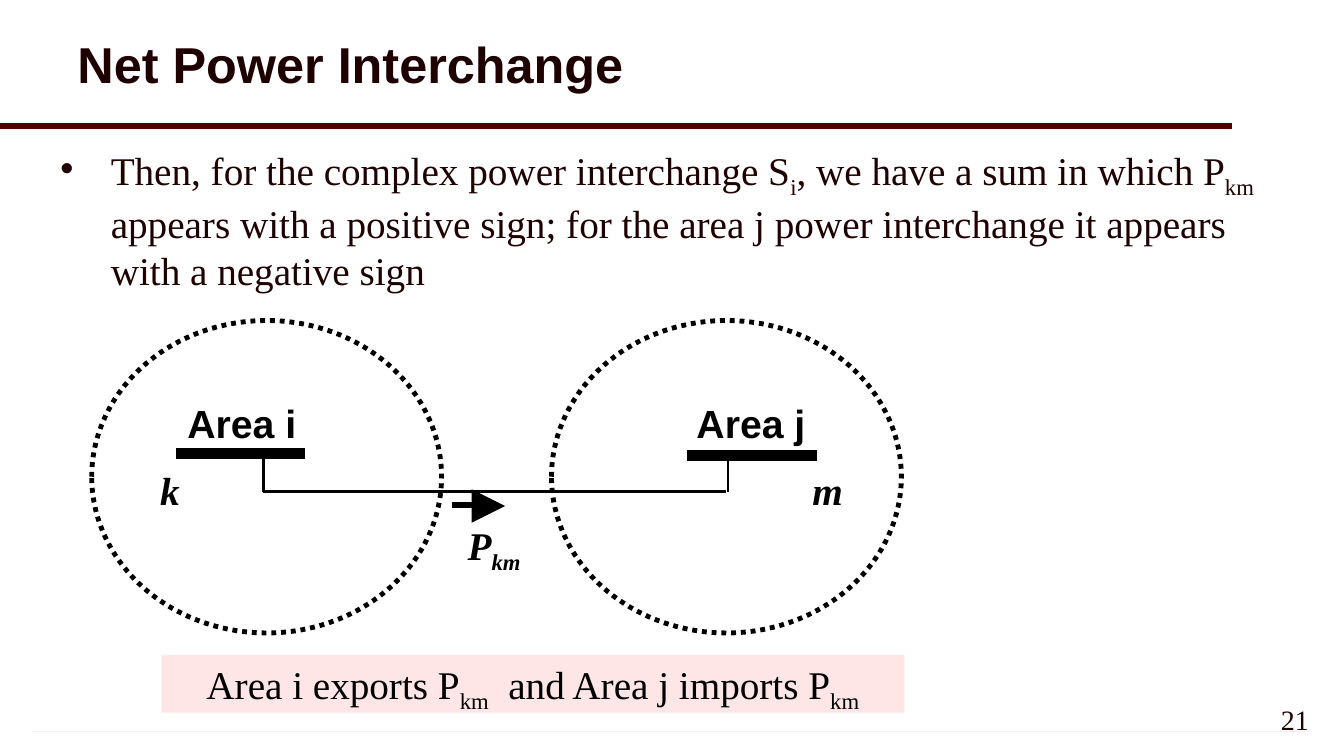
from lxml import etree
from pptx import Presentation
from pptx.dml.color import RGBColor
from pptx.enum.dml import MSO_LINE_DASH_STYLE as DASH
from pptx.enum.shapes import MSO_CONNECTOR, MSO_SHAPE
from pptx.enum.text import MSO_ANCHOR, PP_ALIGN
from pptx.oxml.ns import qn
from pptx.util import Inches, Pt

MAROON = RGBColor(0x50, 0x00, 0x00)
DARK = RGBColor(0x1E, 0x00, 0x00)
BLACK = RGBColor(0x00, 0x00, 0x00)
PINK = RGBColor(0xFF, 0xE6, 0xE6)
LILAC = RGBColor(0xCC, 0x99, 0xFF)
PALE_LILAC = RGBColor(0xF3, 0xEB, 0xFF)
SANS, SERIF = "Arial", "Times New Roman"

prs = Presentation()
prs.slide_width, prs.slide_height = Inches(13.33), Inches(7.5)
slide = prs.slides.add_slide(prs.slide_layouts[6])
shapes = slide.shapes


def write(box, parts, **font_format):
    """Fill the first paragraph; every second part is a subscript."""
    box.text_frame.word_wrap = True
    paragraph = box.text_frame.paragraphs[0]
    for index, part in enumerate(parts):
        run = paragraph.add_run()
        run.text = part
        values = {"size": Pt(28), "name": SERIF, **font_format}
        run.font.color.rgb = values.pop("color", BLACK)
        for attribute, value in values.items():
            setattr(run.font, attribute, value)
        if index % 2:
            run.font._element.set("baseline", "-25000")
    return paragraph


def add_line(x1, y1, x2, y2, width, color=BLACK, arrow=False):
    line = shapes.add_connector(MSO_CONNECTOR.STRAIGHT, Inches(x1), Inches(y1),
                                Inches(x2), Inches(y2))
    line.line.color.rgb = color
    line.line.width = Pt(width)
    if arrow:
        etree.SubElement(line.line._get_or_add_ln(), qn("a:tailEnd"), type="triangle")
    etree.SubElement(line._element.spPr, qn("a:effectLst"))


# Header and footer rules
footer_rule = shapes.add_shape(MSO_SHAPE.RECTANGLE, Inches(0.33), Inches(7.25),
                               Inches(12.66), Inches(0.01))
footer_rule.shadow.inherit = False
footer_rule.line.fill.background()
footer_rule.fill.gradient()
for stop, color in zip(footer_rule.fill.gradient_stops, (LILAC, PALE_LILAC)):
    stop.color.rgb = color
add_line(0, 1.25, 12.22, 1.25, 4, MAROON)

# Title and statement
title = shapes.add_textbox(Inches(0.67), Inches(0.08), Inches(12.22), Inches(1.17))
title.text_frame.vertical_anchor = MSO_ANCHOR.MIDDLE
write(title, ["Net Power Interchange"], size=Pt(36), name=SANS, color=DARK,
      bold=True).line_spacing = 0.9

statement = shapes.add_textbox(Inches(0.5), Inches(1.4), Inches(12.08), Inches(1.6))
bullet = write(statement, [
    "Then, for the complex power interchange S", "i",
    ", we have a sum in which P", "km",
    " appears with a positive sign; for the area j power interchange "
    "it appears with a negative sign"], color=DARK)
bullet_format = bullet._p.get_or_add_pPr()
bullet_format.set("marL", str(Inches(0.5)))
bullet_format.set("indent", str(Inches(-0.5)))
bullet_color = etree.SubElement(bullet_format, qn("a:buClr"))
etree.SubElement(bullet_color, qn("a:srgbClr"), val=str(DARK))
etree.SubElement(bullet_format, qn("a:buChar"), char="•")

# Areas
for left in (0.91, 5.47):
    area = shapes.add_shape(MSO_SHAPE.OVAL, Inches(left), Inches(3.18),
                            Inches(3.47), Inches(3.1))
    area.shadow.inherit = False
    area.fill.background()
    area.line.color.rgb = BLACK
    area.line.width = Pt(3.5)
    area.line.dash_style = DASH.ROUND_DOT

# Buses, tie line and flow arrow
for x1, y1, x2, y2, width in (
        (1.75, 4.5, 3.03, 4.5, 8), (6.81, 4.52, 8.1, 4.52, 8),
        (2.61, 4.5, 2.61, 4.88, 2), (7.22, 4.52, 7.22, 4.88, 2),
        (2.61, 4.88, 5.08, 4.88, 2), (5.08, 4.88, 7.2, 4.88, 2)):
    add_line(x1, y1, x2, y2, width)
add_line(4.48, 5.01, 4.97, 5.01, 4, arrow=True)
add_line(4.84, 5.02, 5.01, 5.02, 8, arrow=True)

# Labels
area_font = {"name": SANS, "bold": True}
symbol_font = {"bold": True, "italic": True}
for left, top, width, height, parts, font_format in (
        (1.76, 3.91, 1.58, 0.48, ["Area i"], area_font),
        (6.81, 3.91, 1.37, 0.48, ["Area j"], area_font),
        (1.49, 4.58, 0.54, 0.73, ["k"], symbol_font),
        (7.96, 4.58, 0.54, 0.73, ["m"], symbol_font),
        (4.54, 5.12, 0.92, 0.38, ["P", "km"], symbol_font)):
    label = shapes.add_textbox(Inches(left), Inches(top), Inches(width), Inches(height))
    write(label, parts, **font_format)

# Conclusion and page number
conclusion = shapes.add_shape(MSO_SHAPE.RECTANGLE, Inches(1.6), Inches(6.5),
                              Inches(7.37), Inches(0.57))
conclusion.shadow.inherit = False
conclusion.fill.solid()
conclusion.fill.fore_color.rgb = PINK
conclusion.line.fill.background()
conclusion.text_frame.vertical_anchor = MSO_ANCHOR.TOP
write(conclusion, ["Area i exports P", "km", "  and Area j imports P", "km"]
      ).alignment = PP_ALIGN.CENTER

page_number = shapes.add_textbox(Inches(11), Inches(6.92), Inches(2.08), Inches(0.5))
write(page_number, ["21"], size=Pt(20), color=DARK).alignment = PP_ALIGN.RIGHT

prs.save("out.pptx")
